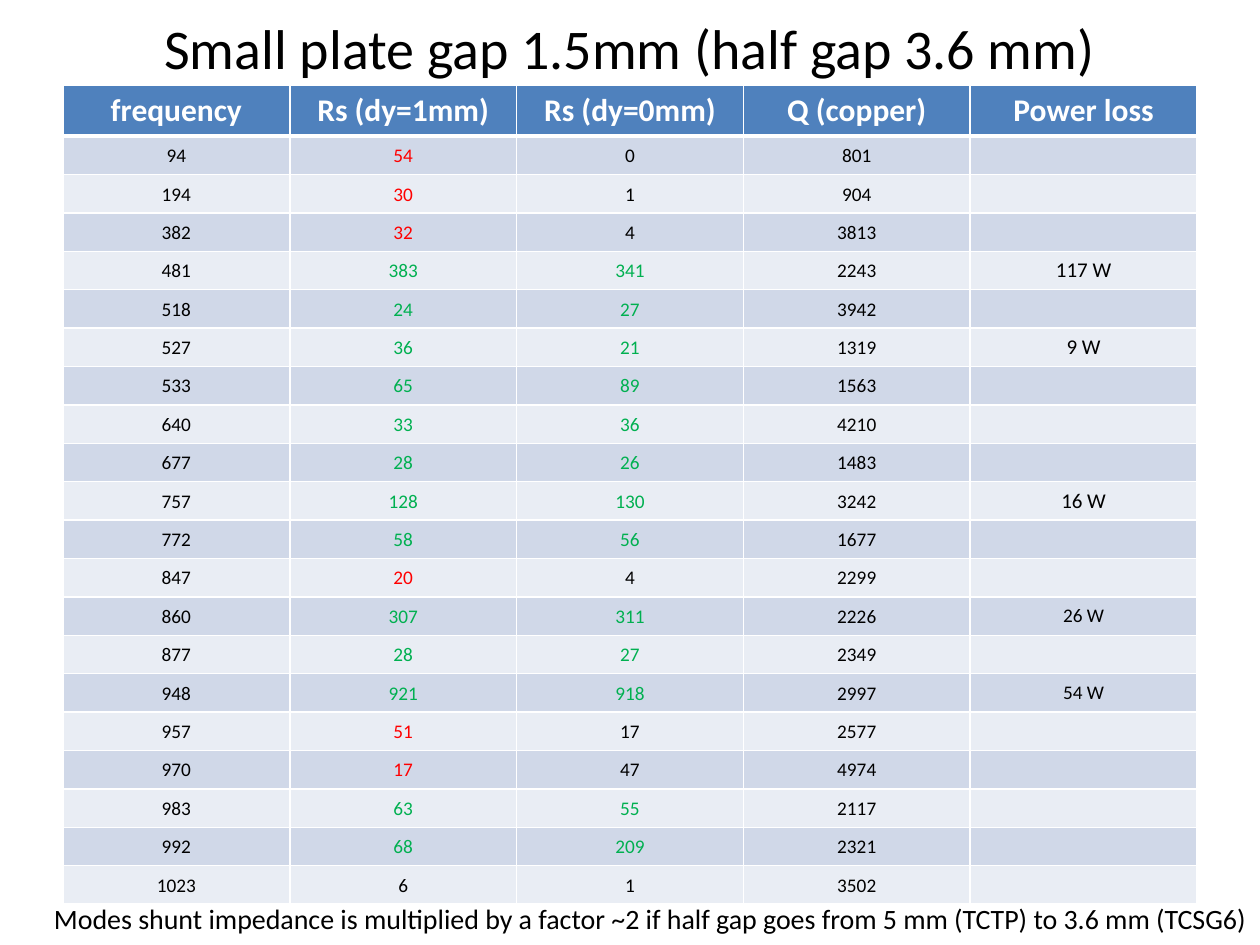
from lxml.etree import SubElement
from pptx import Presentation
from pptx.dml.color import RGBColor
from pptx.enum.text import MSO_ANCHOR, MSO_AUTO_SIZE, PP_ALIGN
from pptx.oxml.ns import qn
from pptx.util import Inches, Pt

BLACK = RGBColor(0x00, 0x00, 0x00)
WHITE = RGBColor(0xFF, 0xFF, 0xFF)
RED = RGBColor(0xFF, 0x00, 0x00)
GREEN = RGBColor(0x00, 0xB0, 0x50)
HEADER_BLUE = RGBColor(0x4F, 0x81, 0xBD)
BANDS = RGBColor(0xD0, 0xD8, 0xE8), RGBColor(0xE9, 0xED, 0xF4)

HEADERS = ["frequency", "Rs (dy=1mm)", "Rs (dy=0mm)", "Q (copper)", "Power loss"]

# Colours of the two shunt impedance columns
STABLE = GREEN, GREEN
CHANGED = RED, BLACK
PLAIN = BLACK, BLACK

# frequency, Rs (dy=1mm), Rs (dy=0mm), Q, power loss, impedance colours
MODES = [
    (94, 54, 0, 801, "", CHANGED),
    (194, 30, 1, 904, "", CHANGED),
    (382, 32, 4, 3813, "", CHANGED),
    (481, 383, 341, 2243, "117 W", STABLE),
    (518, 24, 27, 3942, "", STABLE),
    (527, 36, 21, 1319, "9 W", STABLE),
    (533, 65, 89, 1563, "", STABLE),
    (640, 33, 36, 4210, "", STABLE),
    (677, 28, 26, 1483, "", STABLE),
    (757, 128, 130, 3242, "16 W", STABLE),
    (772, 58, 56, 1677, "", STABLE),
    (847, 20, 4, 2299, "", CHANGED),
    (860, 307, 311, 2226, "26 W", STABLE),
    (877, 28, 27, 2349, "", STABLE),
    (948, 921, 918, 2997, "54 W", STABLE),
    (957, 51, 17, 2577, "", CHANGED),
    (970, 17, 47, 4974, "", CHANGED),
    (983, 63, 55, 2117, "", STABLE),
    (992, 68, 209, 2321, "", STABLE),
    (1023, 6, 1, 3502, "", PLAIN),
]


class SlideBuilder:
    font = "Calibri"
    header_height = Inches(0.39)

    def __init__(self, prs):
        self.width, self.height = prs.slide_width, prs.slide_height
        self.slide = prs.slides.add_slide(prs.slide_layouts[6])

    def box(self, x, y, w, h):
        """Turn shares of the slide's size into lengths."""
        return (int(x * self.width), int(y * self.height),
                int(w * self.width), int(h * self.height))

    def style(self, p, size, color=BLACK, bold=False, align=PP_ALIGN.CENTER):
        p.alignment = align
        for r in p.runs:
            r.font.name, r.font.size, r.font.bold = self.font, Pt(size), bold
            r.font.color.rgb = color
        if not p.runs:  # an empty cell must not stretch its row
            SubElement(p._p, qn("a:endParaRPr"), sz=str(size * 100))

    def text(self, text, share, size, wrap=True, align=PP_ALIGN.CENTER):
        tf = self.slide.shapes.add_textbox(*self.box(*share)).text_frame
        tf.text = text
        tf.word_wrap = wrap
        tf.auto_size = MSO_AUTO_SIZE.NONE if wrap else MSO_AUTO_SIZE.SHAPE_TO_FIT_TEXT
        tf.vertical_anchor = MSO_ANCHOR.MIDDLE if wrap else MSO_ANCHOR.TOP
        self.style(tf.paragraphs[0], size, align=align)

    def borders(self, cell, top=1, bottom=1):
        tc_pr = cell._tc.get_or_add_tcPr()
        for side, points in (("L", 1), ("R", 1), ("T", top), ("B", bottom)):
            ln = SubElement(tc_pr, qn(f"a:ln{side}"), w=str(Pt(points)))
            fill = SubElement(ln, qn("a:solidFill"))
            SubElement(fill, qn("a:srgbClr"), val=str(WHITE))

    def cell(self, cell, text, fill, size, color=BLACK, bold=False, top=1, bottom=1):
        self.borders(cell, top, bottom)
        cell.fill.solid()
        cell.fill.fore_color.rgb = fill
        cell.vertical_anchor = MSO_ANCHOR.MIDDLE
        cell.text = str(text)
        self.style(cell.text_frame.paragraphs[0], size, color, bold)

    def mode_table(self, share):
        frame = self.slide.shapes.add_table(
            len(MODES) + 1, len(HEADERS), *self.box(*share))
        table = frame.table
        row_height = (frame.height - self.header_height) // len(MODES)
        for i, row in enumerate(table.rows):
            row.height = row_height if i else self.header_height
        for col, header in enumerate(HEADERS):
            self.cell(table.cell(0, col), header, HEADER_BLUE, 18, WHITE, True, bottom=3)
        for i, (*values, impedance_colors) in enumerate(MODES):
            colors = BLACK, *impedance_colors, BLACK, BLACK
            for col, (value, color) in enumerate(zip(values, colors)):
                cell = table.cell(i + 1, col)
                is_loss = col == len(HEADERS) - 1
                margin = Inches(0 if is_loss else 0.01)
                cell.margin_left = cell.margin_right = cell.margin_top = margin
                cell.margin_bottom = 0
                size = 12 if is_loss and i < 12 else 11
                self.cell(cell, value, BANDS[i % 2], size, color, top=1 if i else 3)


def main():
    prs = Presentation()
    prs.slide_width, prs.slide_height = Inches(10), Inches(7.5)
    s = SlideBuilder(prs)
    s.text("Small plate gap 1.5mm (half gap 3.6 mm)", (0.05, 0, 0.9, 0.1), 32)
    s.mode_table((0.05, 0.09, 0.9, 0.865))
    s.text("Modes shunt impedance is multiplied by a factor ~2 if half gap goes "
           "from 5 mm (TCTP) to 3.6 mm (TCSG6)",
           (0.033, 0.947, 0.978, 0.05), 16, wrap=False, align=PP_ALIGN.LEFT)
    prs.save("out.pptx")


if __name__ == "__main__":
    main()
